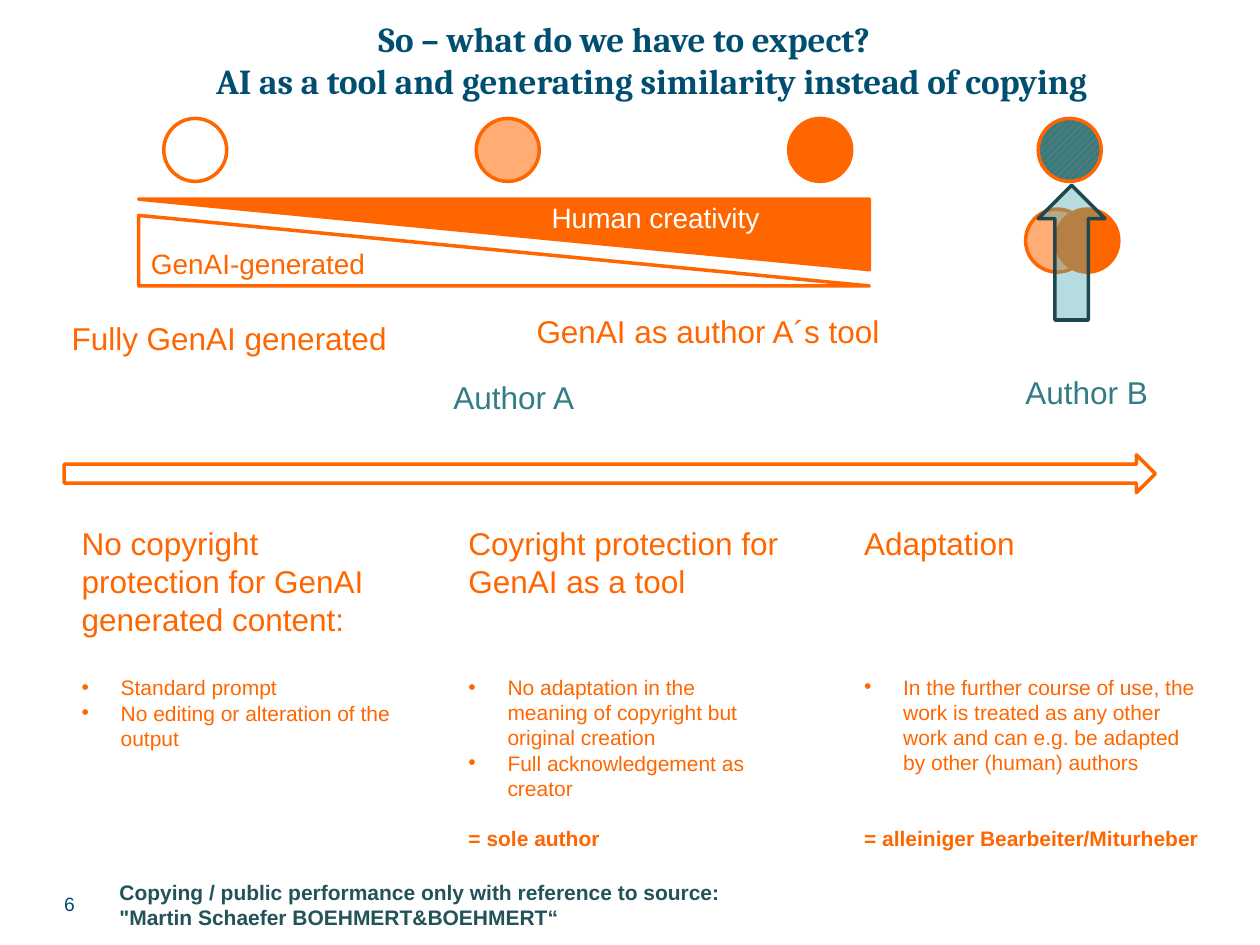
from lxml import etree
from pptx import Presentation
from pptx.dml.color import RGBColor
from pptx.enum.dml import MSO_PATTERN
from pptx.enum.shapes import MSO_SHAPE
from pptx.enum.text import MSO_AUTO_SIZE, PP_ALIGN
from pptx.oxml.ns import qn
from pptx.util import Inches, Pt

CIRCLE = MSO_SHAPE.FLOWCHART_CONNECTOR
TRIANGLE = MSO_SHAPE.ISOSCELES_TRIANGLE
RIGHT_ARROW = MSO_SHAPE.RIGHT_ARROW
UP_ARROW = MSO_SHAPE.UP_ARROW
DIAGONAL = MSO_PATTERN.WIDE_UPWARD_DIAGONAL
FIT_TEXT = MSO_AUTO_SIZE.SHAPE_TO_FIT_TEXT
CENTER = PP_ALIGN.CENTER

ORANGE, TEAL, NAVY, WHITE = "FF6600", "327D85", "004F71", "FFFFFF"
PALE_TEAL, DARK_TEAL, FOOTER_TEAL = "43A7B1", "1D494E", "215358"
DIAMETER = 0.5
HEADING_LINE, BODY_LINE = 21.4, 14.4

COLUMNS = [
    (0.55, 2.66, 2.32, "No copyright protection for GenAI generated content:", 1,
     ["Standard prompt", "No editing or alteration of the output"], 0, None),
    (3.62, 2.66, 2.73, "Coyright protection for GenAI as a tool", 2,
     ["No adaptation in the meaning of copyright but original creation",
      "Full acknowledgement as creator"], 1, "= sole author"),
    (6.76, 2.89, 2.73, "Adaptation", 3,
     ["In the further course of use, the work is treated as any other work "
      "and can e.g. be adapted by other (human) authors"], 2,
     "= alleiniger Bearbeiter/Miturheber"),
]


def rgb(color):
    """Turn a hex string into a colour."""
    return RGBColor.from_string(color)


def set_indent(paragraph, inches):
    """Give a paragraph a hanging indent."""
    properties = paragraph._p.get_or_add_pPr()
    properties.set("marL", str(Inches(inches)))
    properties.set("indent", str(-Inches(inches)))
    return properties


def add_bullet(paragraph):
    """Turn a paragraph into a bulleted line."""
    properties = set_indent(paragraph, 0.31)
    etree.SubElement(properties, qn("a:buFont")).set("typeface", "Arial")
    etree.SubElement(properties, qn("a:buChar")).set("char", "•")


def format_runs(paragraph, size, color, bold=False, font="Arial"):
    """Apply one text style to all runs of a paragraph."""
    for run in paragraph.runs:
        run.font.name = font
        run.font.size = Pt(size)
        run.font.bold = bold
        run.font.color.rgb = rgb(color)


def add_frame(slide, left, top, width, height):
    """Add an empty wrapping text box and return its text frame."""
    box = slide.shapes.add_textbox(
        Inches(left), Inches(top), Inches(width), Inches(height))
    frame = box.text_frame
    frame.word_wrap = True
    return frame


def add_label(slide, text, left, top, width, height, size, color, bold=False):
    """Add a text box in a single style."""
    frame = add_frame(slide, left, top, width, height)
    frame.auto_size = FIT_TEXT
    frame.text = text
    for paragraph in frame.paragraphs:
        format_runs(paragraph, size, color, bold)
    return frame


def remove_insets(frame):
    """Let text start at the edges of its box."""
    frame.auto_size = MSO_AUTO_SIZE.NONE
    frame.margin_left = frame.margin_right = 0
    frame.margin_top = frame.margin_bottom = 0


def add_figure(slide, kind, left, top, width, height,
               fill=None, alpha=None, line=ORANGE):
    """Add an outlined preset shape with an optional, possibly sheer, fill."""
    figure = slide.shapes.add_shape(
        kind, Inches(left), Inches(top), Inches(width), Inches(height))
    figure.shadow.inherit = False
    figure.line.color.rgb = rgb(line)
    figure.line.width = Pt(2)
    if fill is None:
        figure.fill.background()
        return figure
    figure.fill.solid()
    figure.fill.fore_color.rgb = rgb(fill)
    if alpha is not None:
        solid_color = figure._element.spPr.find(qn("a:solidFill"))[0]
        etree.SubElement(solid_color, qn("a:alpha")).set("val", str(alpha * 1000))
    return figure


def add_circle(slide, left, top, fill=None, alpha=None):
    """Add a circle standing for a work."""
    return add_figure(slide, CIRCLE, left, top, DIAMETER, DIAMETER, fill, alpha)


def add_wedge(slide, top, fill=None, rotation=0):
    """Add a right-angled triangle showing a share of the work."""
    wedge = add_figure(slide, TRIANGLE, 1.1, top, 5.8, 0.56, fill)
    wedge.adjustments[0] = 0
    wedge.rotation = rotation


def add_column(slide, left, width, height, heading, heading_gap,
               points, result_gap, result):
    """Add a heading, its bullet points and an optional bold result."""
    frame = add_label(slide, heading, left, 4.11, width, height, 18, ORANGE)
    for index, point in enumerate(points):
        paragraph = frame.add_paragraph()
        paragraph.text = point
        if index == 0:
            paragraph.space_before = Pt(heading_gap * HEADING_LINE)
        add_bullet(paragraph)
        format_runs(paragraph, 12, ORANGE)
    if result:
        paragraph = frame.add_paragraph()
        paragraph.text = result
        paragraph.space_before = Pt(result_gap * BODY_LINE)
        format_runs(paragraph, 12, ORANGE, True)


def add_title(slide):
    """Add the two-line title."""
    frame = add_frame(slide, 0.13, 0.14, 9.65, 0.74)
    remove_insets(frame)
    frame.text = ("So – what do we have to expect?\v"
                  "AI as a tool and generating similarity instead of copying ")
    title = frame.paragraphs[0]
    title.alignment = CENTER
    set_indent(title, 0.5)
    format_runs(title, 20, NAVY, True, "Cambria")


def add_author_a(slide):
    """Add the scale from generated to human work."""
    add_wedge(slide, 1.71)
    add_wedge(slide, 1.58, ORANGE, 180)
    for step, (fill, alpha) in enumerate(
            [(None, None), (ORANGE, 54), (ORANGE, None)]):
        add_circle(slide, 1.3 + step * 2.48, 0.94, fill, alpha)
    add_label(slide, "GenAI-generated", 1.1, 1.91, 2.64, 0.37, 16, ORANGE)
    add_label(slide, "Human creativity", 4.28, 1.54, 2.77, 0.37, 16, WHITE)
    add_label(slide, "Fully GenAI generated", 0.47, 2.48, 2.76, 0.4, 18, ORANGE)
    add_label(slide, "GenAI as author A´s tool", 4.16, 2.43, 3.49, 0.4, 18, ORANGE)
    add_label(slide, "Author A", 3.5, 2.95, 1.4, 0.4, 18, TEAL)


def add_author_b(slide):
    """Add the adapted work rising from two overlapping works."""
    adapted = add_circle(slide, 8.24, 0.94)
    adapted.fill.patterned()
    adapted.fill.pattern = DIAGONAL
    adapted.fill.fore_color.rgb = rgb(ORANGE)
    adapted.fill.back_color.rgb = rgb(TEAL)
    add_circle(slide, 8.38, 1.66, ORANGE)
    add_circle(slide, 8.14, 1.66, ORANGE, 54)
    add_figure(slide, UP_ARROW, 8.24, 1.47, 0.53, 1.07, PALE_TEAL, 39, DARK_TEAL)
    add_label(slide, "Author B", 8.04, 2.91, 1.4, 0.4, 18, TEAL)


def add_footer(slide):
    """Add the page number and the source note."""
    remove_insets(add_label(slide, "6", 0.51, 7.08, 0.51, 0.2, 11, NAVY))
    add_label(slide, "Copying / public performance only with reference to source:\n"
              "\"Martin Schaefer BOEHMERT&BOEHMERT“",
              0.85, 6.93, 5.74, 0.5, 12, FOOTER_TEAL, True)


def main():
    """Build the slide and save it."""
    presentation = Presentation()
    presentation.slide_width, presentation.slide_height = Inches(10), Inches(7.5)
    slide = presentation.slides.add_slide(presentation.slide_layouts[6])
    add_title(slide)
    add_author_a(slide)
    add_author_b(slide)
    add_figure(slide, RIGHT_ARROW, 0.51, 3.61, 8.66, 0.3, WHITE)
    for column in COLUMNS:
        add_column(slide, *column)
    add_footer(slide)
    presentation.save("out.pptx")


if __name__ == "__main__":
    main()
